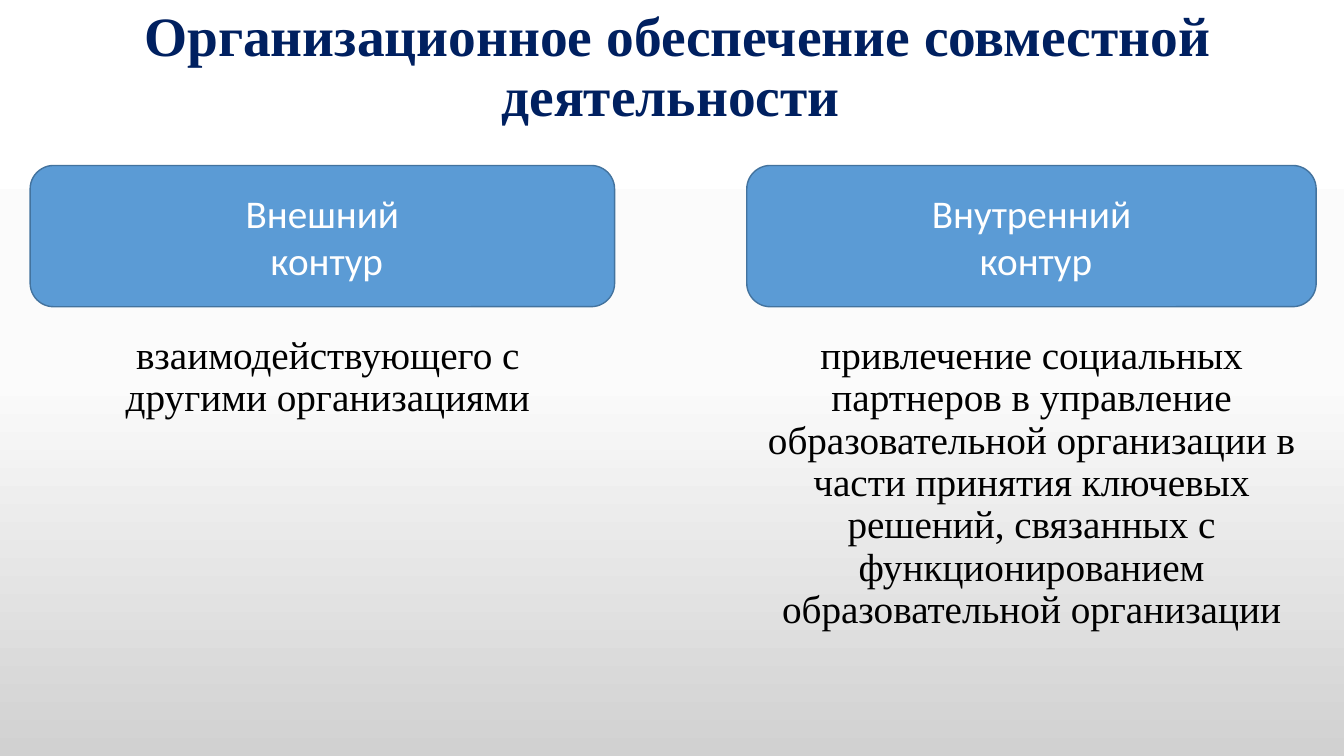
from copy import deepcopy
from dataclasses import dataclass

from pptx import Presentation
from pptx.dml.color import RGBColor
from pptx.enum.shapes import MSO_SHAPE
from pptx.enum.text import MSO_ANCHOR, PP_ALIGN
from pptx.oxml.ns import qn
from pptx.slide import Slide
from pptx.text.text import TextFrame
from pptx.util import Cm, Pt


@dataclass(frozen=True)
class TextStyle:
    font: str
    size: float
    color: str
    bold: bool = False
    line_spacing: float = 1.0
    space_before: float = 0


@dataclass(frozen=True)
class Theme:
    title: TextStyle = TextStyle("Times New Roman", 39.6, "002060", True, 0.9)
    body: TextStyle = TextStyle("Times New Roman", 28, "000000", False, 0.9, 10)
    card: TextStyle = TextStyle("Calibri", 28, "FFFFFF")
    card_fill: str = "5B9BD5"
    card_line: str = "43739E"
    background: tuple[tuple[float, str], ...] = (
        (0, "FFFFFF"), (0.5, "FBFBFB"), (1, "D1D1D1"))


@dataclass(frozen=True)
class Box:
    """Left, top, width and height in centimetres."""
    left: float
    top: float
    width: float
    height: float

    def emu(self) -> tuple[Cm, Cm, Cm, Cm]:
        return Cm(self.left), Cm(self.top), Cm(self.width), Cm(self.height)


@dataclass(frozen=True)
class Contour:
    heading: tuple[str, ...]
    card: Box
    text: str
    text_box: Box


THEME = Theme()
CARD_TOP, CARD_HEIGHT = 4.17, 3.56
BODY_TOP, BODY_HEIGHT = 8.33, 8.94

TITLE = "Организационное обеспечение совместной деятельности "
TITLE_BOX = Box(0.97, 0.13, 32.21, 3.2)
CONTOURS = (
    Contour(
        ("Внешний", " контур"),
        Box(0.76, CARD_TOP, 14.73, CARD_HEIGHT),
        "взаимодействующего с другими организациями",
        Box(1.3, BODY_TOP, 13.92, BODY_HEIGHT),
    ),
    Contour(
        ("Внутренний", " контур"),
        Box(18.82, CARD_TOP, 14.35, CARD_HEIGHT),
        "привлечение социальных партнеров в управление образовательной "
        "организации в части принятия ключевых решений, связанных с "
        "функционированием образовательной организации",
        Box(18.82, BODY_TOP, 14.35, BODY_HEIGHT),
    ),
)


def paint_background(s: Slide) -> None:
    fill = s.background.fill
    fill.gradient()
    fill.gradient_angle = 270
    stop_list = s.element.find(".//" + qn("a:gsLst"))
    stop_list.append(deepcopy(stop_list[-1]))
    for stop, (position, color) in zip(fill.gradient_stops, THEME.background):
        stop.position = position
        stop.color.rgb = RGBColor.from_string(color)


def write(tf: TextFrame, lines: tuple[str, ...], style: TextStyle,
          anchor: MSO_ANCHOR) -> None:
    """Fill the frame with one centred paragraph per line."""
    tf.word_wrap = True
    tf.vertical_anchor = anchor
    for i, line in enumerate(lines):
        p = tf.add_paragraph() if i else tf.paragraphs[0]
        p.alignment = PP_ALIGN.CENTER
        p.line_spacing = style.line_spacing
        p.space_before = Pt(style.space_before)
        r = p.add_run()
        r.text = line
        r.font.name = style.font
        r.font.size = Pt(style.size)
        r.font.bold = style.bold
        r.font.color.rgb = RGBColor.from_string(style.color)


def add_text(s: Slide, box: Box, text: str, style: TextStyle,
             anchor: MSO_ANCHOR) -> None:
    sp = s.shapes.add_textbox(*box.emu())
    write(sp.text_frame, (text,), style, anchor)


def add_card(s: Slide, box: Box, lines: tuple[str, ...]) -> None:
    sp = s.shapes.add_shape(MSO_SHAPE.ROUNDED_RECTANGLE, *box.emu())
    sp.shadow.inherit = False
    sp.fill.solid()
    sp.fill.fore_color.rgb = RGBColor.from_string(THEME.card_fill)
    sp.line.color.rgb = RGBColor.from_string(THEME.card_line)
    sp.line.width = Pt(1)
    write(sp.text_frame, lines, THEME.card, MSO_ANCHOR.MIDDLE)


def main() -> None:
    prs = Presentation()
    prs.slide_width, prs.slide_height = Cm(33.87), Cm(19.05)
    s = prs.slides.add_slide(prs.slide_layouts[6])
    paint_background(s)
    add_text(s, TITLE_BOX, TITLE, THEME.title, MSO_ANCHOR.MIDDLE)
    for contour in CONTOURS:
        add_card(s, contour.card, contour.heading)
        add_text(s, contour.text_box, contour.text, THEME.body, MSO_ANCHOR.TOP)
    prs.save("out.pptx")


if __name__ == "__main__":
    main()
